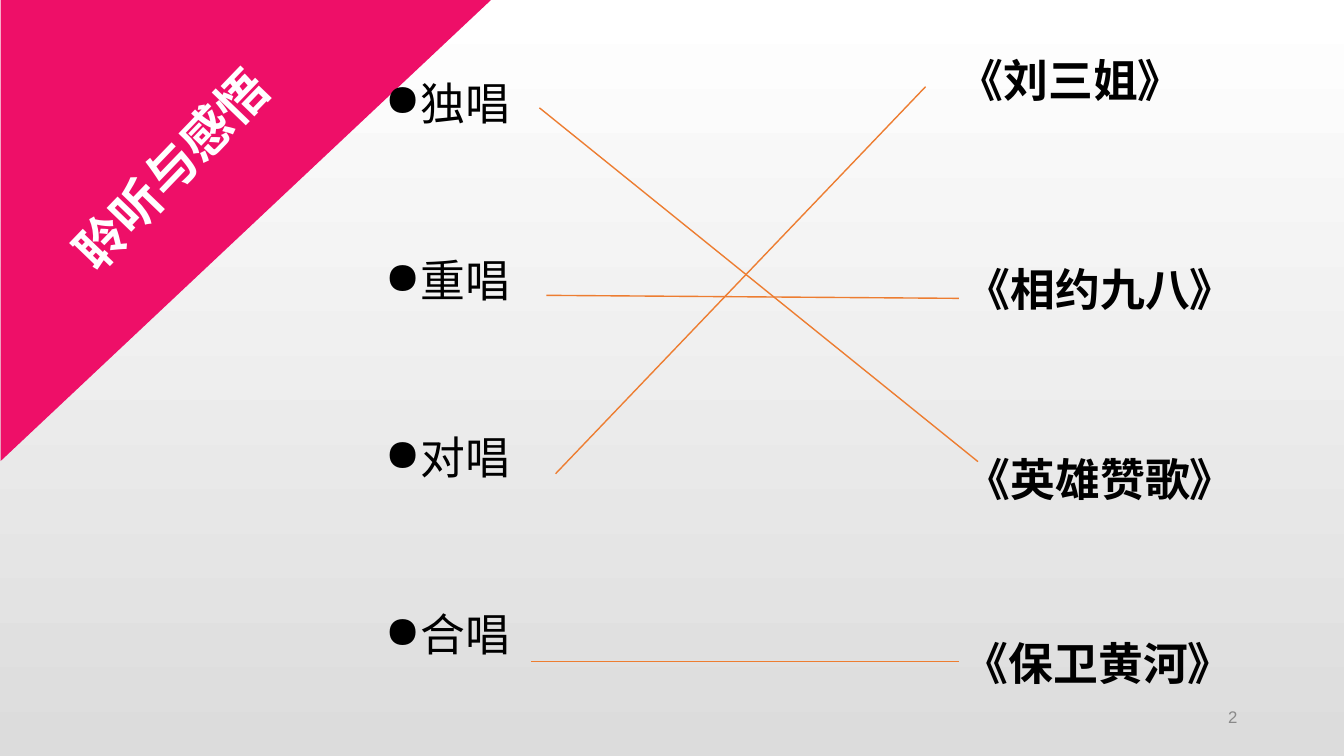
from lxml import etree
from pptx import Presentation
from pptx.dml.color import RGBColor
from pptx.enum.shapes import MSO_CONNECTOR, MSO_SHAPE
from pptx.enum.text import MSO_ANCHOR, PP_ALIGN
from pptx.oxml import parse_xml
from pptx.oxml.ns import nsdecls, qn
from pptx.util import Inches, Pt

COLORS = {"white": "FFFFFF", "gray": "DCDCDC", "pink": "EE0F68",
          "orange": "ED7D31", "black": "000000", "number": "898989"}


def color(name):
    return RGBColor.from_string(COLORS[name])


def style(para, size, name, bold=False, face="Arial"):
    para.font.size = Pt(size)
    para.font.name = face
    para.font.bold = bold
    para.font.color.rgb = color(name)


deck = Presentation()
deck.slide_width, deck.slide_height = Inches(13.33), Inches(7.5)
page = deck.slides.add_slide(deck.slide_layouts[5])

# Background fading downwards
backdrop = page.background.fill
backdrop.gradient()
backdrop.gradient_angle = 270
for stop, name, position in zip(backdrop.gradient_stops, ("white", "gray"), (0, 1)):
    stop.color.rgb = color(name)
    stop.position = position

# Corner triangle
corner = page.shapes.add_shape(MSO_SHAPE.RIGHT_TRIANGLE, Inches(0.15), Inches(-0.15),
                               Inches(4.58), Inches(4.87))
corner.rotation = 90
corner.shadow.inherit = False
corner.fill.solid()
corner.fill.fore_color.rgb = color("pink")
corner.line.fill.background()

# Slanted title, brought in front of the triangle
title = page.shapes.title
title.left, title.top = Inches(-0.43), Inches(1.32)
title.width, title.height = Inches(4.24), Inches(0.71)
title.rotation = 313.8
title.text_frame.text = "聆听与感悟"
title.text_frame.vertical_anchor = MSO_ANCHOR.TOP
title.text_frame.paragraphs[0].alignment = PP_ALIGN.CENTER
style(title.text_frame.paragraphs[0], 36, "white", True, "Noto Sans CJK SC")
corner._element.addnext(title._element)

# Kinds of singing, evenly spaced bullets
kinds = page.shapes.add_textbox(Inches(3.72), Inches(0.76), Inches(5.43), Inches(6.25))
kinds.text_frame.word_wrap = True
kinds.text_frame.text = "独唱\n重唱\n对唱\n合唱"
for para in kinds.text_frame.paragraphs:
    style(para, 32, "black")
    para.line_spacing = 0.9
    para.space_after = Pt(92)
    properties = para._p.get_or_add_pPr()
    properties.set("marL", str(Inches(0.25)))
    properties.set("indent", str(Inches(-0.25)))
    bullet = etree.Element(qn("a:buChar"), char="●")
    properties.find(qn("a:defRPr")).addprevious(bullet)

# Song titles
songs = [("《刘三姐》", 9.41, 0.53), ("《相约九八》", 9.48, 2.61),
         ("《英雄赞歌》", 9.48, 4.49), ("《保卫黄河》", 9.46, 6.32)]
for song, left, top in songs:
    box = page.shapes.add_textbox(Inches(left), Inches(top), Inches(3.92), Inches(0.59))
    box.text_frame.word_wrap = True
    box.text_frame.text = song
    para = box.text_frame.paragraphs[0]
    para.line_spacing = 0.9
    style(para, 32, "black", True)

# Lines matching each kind with its song
matches = [(5.35, 1.07, 9.7, 4.58), (5.42, 2.93, 9.51, 2.96),
           (5.51, 4.7, 9.18, 0.86), (5.27, 6.56, 9.51, 6.56)]
for ends in matches:
    match = page.shapes.add_connector(MSO_CONNECTOR.STRAIGHT, *map(Inches, ends))
    match.line.color.rgb = color("orange")
    match.line.width = Pt(1)
    etree.SubElement(match._element.spPr, qn("a:effectLst"))

# Slide number field
number = page.shapes.add_textbox(Inches(9.42), Inches(6.94), Inches(2.95), Inches(0.35))
number.text_frame.word_wrap = True
number.text_frame.vertical_anchor = MSO_ANCHOR.MIDDLE
para = number.text_frame.paragraphs[0]
para.alignment = PP_ALIGN.RIGHT
style(para, 12, "number")
para._p.append(parse_xml(
    f'<a:fld {nsdecls("a")} id="{{B6F15528-21DE-4FAA-801E-634DDDAF4B2B}}" type="slidenum">'
    '<a:rPr lang="zh-CN" sz="1200"><a:solidFill><a:srgbClr val="898989"/></a:solidFill>'
    '<a:latin typeface="Arial"/></a:rPr><a:t>2</a:t></a:fld>'))
deck.element.set("firstSlideNum", "2")

deck.save("out.pptx")
